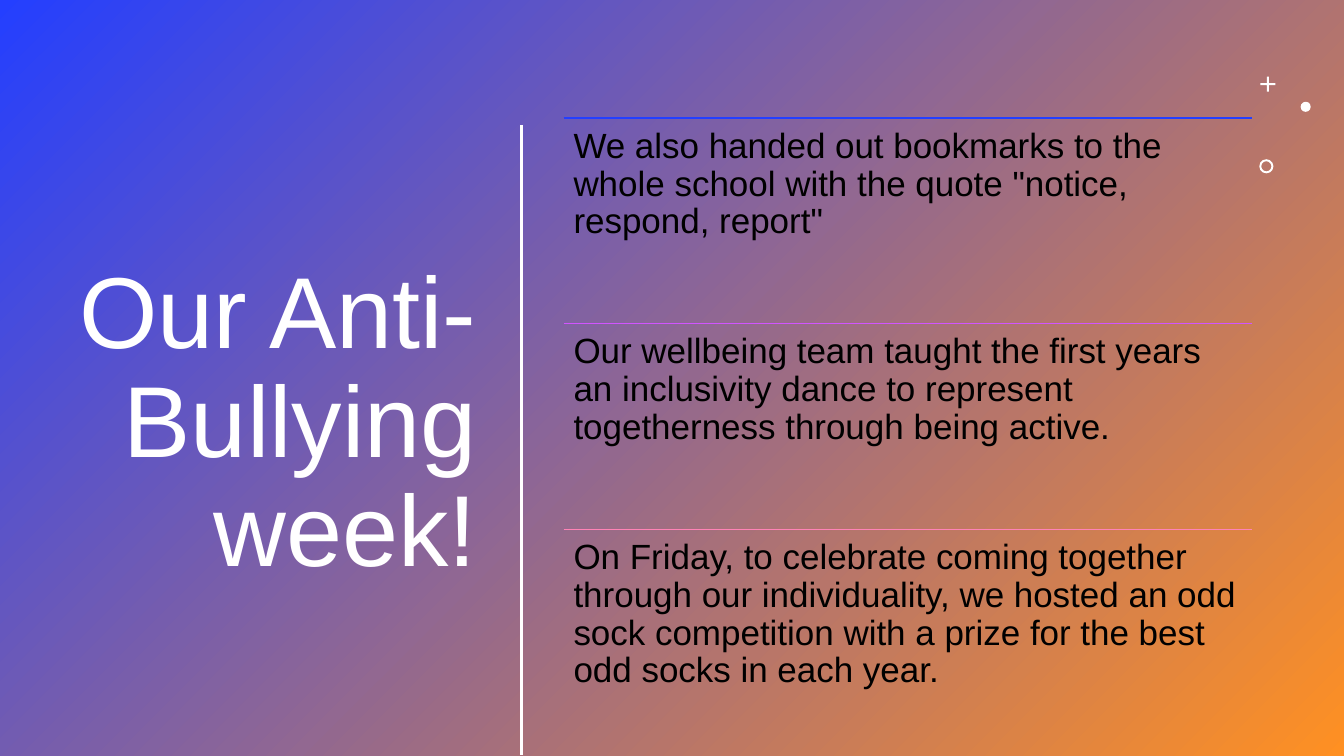
from dataclasses import dataclass

from lxml import etree
from pptx import Presentation
from pptx import util as u
from pptx.dml.color import RGBColor
from pptx.enum import shapes, text
from pptx.oxml import ns

Inches = u.Inches
Shape = shapes.MSO_SHAPE


@dataclass(frozen=True)
class Theme:
    font: str = "Arial"
    white: str = "FFFFFF"
    ink: str = "000000"
    blue: str = "243FFF"
    orange: str = "FF9022"
    violet: str = "D154FF"
    pink: str = "FF83B6"
    head: int = 72
    body: int = 25


class Deck:
    def __init__(self, theme):
        self.theme = theme
        self.prs = Presentation()
        self.prs.slide_width = Inches(13.33)
        self.prs.slide_height = Inches(7.5)
        self.slide = self.prs.slides.add_slide(self.prs.slide_layouts[5])

    def shape(self, kind, x, y, w, h):
        item = self.slide.shapes.add_shape(
            kind, Inches(x), Inches(y), Inches(w), Inches(h))
        item.shadow.inherit = False
        item.line.fill.background()
        return item

    def back(self, start, end):
        item = self.shape(Shape.RECTANGLE, 0, 0, 13.33, 7.5)
        item.fill.gradient()
        item.fill.gradient_angle = 315
        for stop, color in zip(item.fill.gradient_stops, (start, end)):
            stop.color.rgb = RGBColor.from_string(color)
        # Keep the title in front of the backdrop
        self.slide.shapes.title._element.addprevious(item._element)

    def mark(self, kind, x, y, size, adjust=None):
        item = self.shape(kind, x, y, size, size)
        item.fill.solid()
        item.fill.fore_color.rgb = RGBColor.from_string(self.theme.white)
        if adjust is not None:
            item.adjustments[0] = adjust

    def line(self, x1, y1, x2, y2, color, width):
        item = self.slide.shapes.add_connector(
            shapes.MSO_CONNECTOR.STRAIGHT,
            Inches(x1), Inches(y1), Inches(x2), Inches(y2))
        item.line.color.rgb = RGBColor.from_string(color)
        item.line.width = u.Pt(width)
        etree.SubElement(item._element.spPr, ns.qn("a:effectLst"))

    def label(self, box, words, size, color, align, anchor):
        frame = box.text_frame
        frame.text = words
        frame.word_wrap = True
        frame.auto_size = text.MSO_AUTO_SIZE.NONE
        frame.vertical_anchor = anchor
        para = frame.paragraphs[0]
        para.alignment = align
        para.line_spacing = 0.9
        para.font.name = self.theme.font
        para.font.size = u.Pt(size)
        para.font.color.rgb = RGBColor.from_string(color)

    def title(self, words, x, y, w, h):
        box = self.slide.shapes.title
        box.left, box.top = Inches(x), Inches(y)
        box.width, box.height = Inches(w), Inches(h)
        self.label(box, words, self.theme.head, self.theme.white,
                   text.PP_ALIGN.RIGHT, text.MSO_ANCHOR.MIDDLE)

    def note(self, words, x, y, w, h):
        box = self.slide.shapes.add_textbox(
            Inches(x), Inches(y), Inches(w), Inches(h))
        frame = box.text_frame
        frame.margin_left = frame.margin_right = Inches(0.1)
        frame.margin_top = frame.margin_bottom = Inches(0.1)
        self.label(box, words, self.theme.body, self.theme.ink,
                   text.PP_ALIGN.LEFT, text.MSO_ANCHOR.TOP)


def main():
    theme = Theme()
    deck = Deck(theme)

    # Backdrop and title
    deck.back(theme.blue, theme.orange)
    deck.title("Our Anti-Bullying week!", 0.52, 1.16, 4.31, 6.11)

    # Small ornaments and divider
    deck.mark(Shape.CROSS, 12.5, 0.76, 0.15, 0.43)
    deck.mark(Shape.OVAL, 12.9, 1.01, 0.1)
    deck.line(5.17, 1.24, 5.17, 7.49, theme.white, 2)
    deck.mark(Shape.DONUT, 12.49, 1.58, 0.14, 0.14)

    # Ruled list of events
    events = [
        (theme.blue, "We also handed out bookmarks to the whole school "
                     "with the quote \"notice, respond, report\""),
        (theme.violet, "Our wellbeing team taught the first years an "
                       "inclusivity dance to represent togetherness "
                       "through being active."),
        (theme.pink, "On Friday, to celebrate coming together through our "
                     "individuality, we hosted an odd sock competition "
                     "with a prize for the best odd socks in each year."),
    ]
    left, top, width, step = 5.59, 1.17, 6.83, 2.04
    for row, (color, words) in enumerate(events):
        y = top + row * step
        deck.line(left, y, left + width, y, color, 1)
        deck.note(words, left, y, width, step)

    deck.prs.save("out.pptx")


if __name__ == "__main__":
    main()
